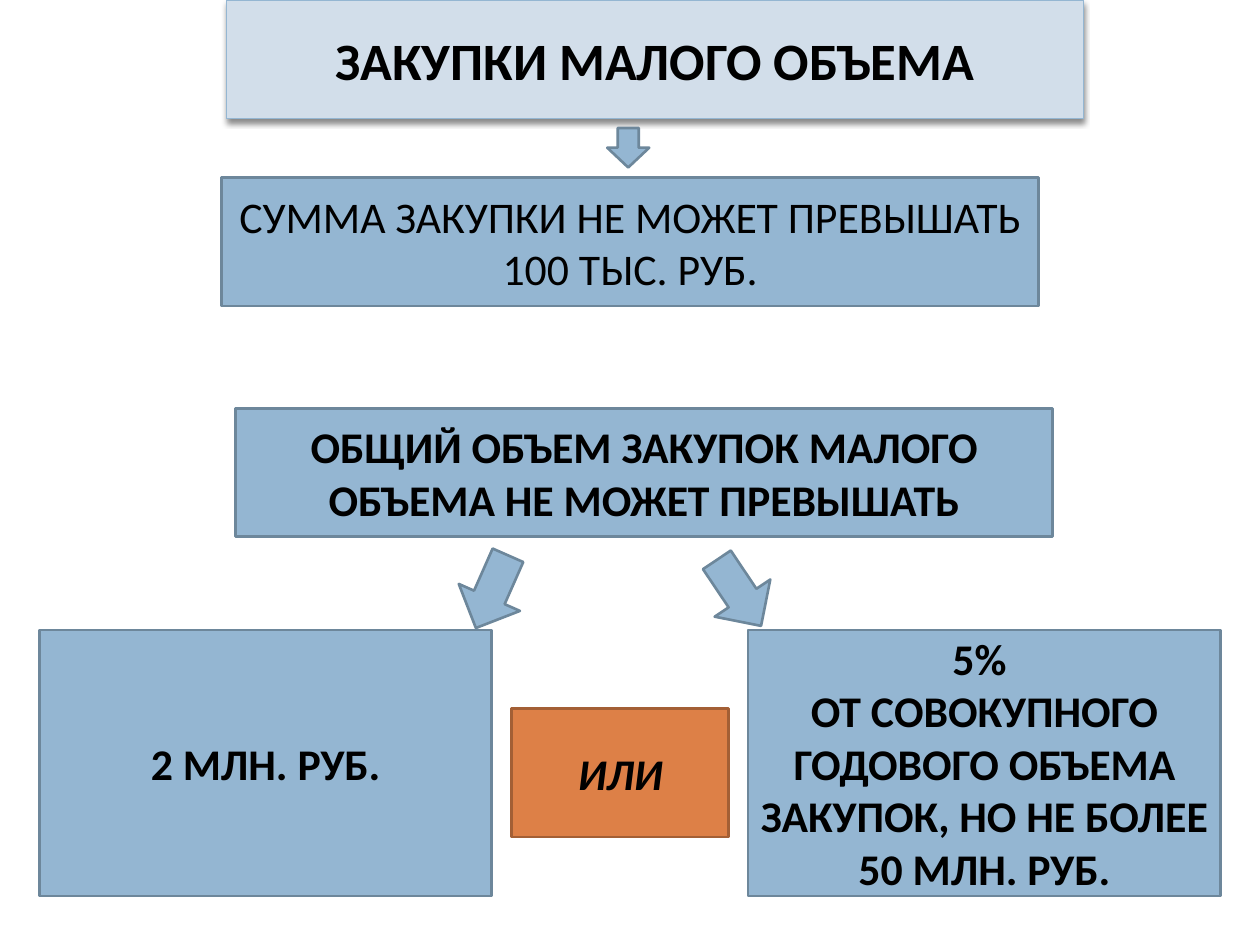
from lxml import etree
from pptx import Presentation
from pptx.dml.color import RGBColor
from pptx.enum import shapes, text
from pptx.oxml import ns
from pptx.util import Pt

BLACK = RGBColor(0x00, 0x00, 0x00)
PALE = RGBColor(0xD2, 0xDE, 0xEA)
BLUE = RGBColor(0x94, 0xB6, 0xD2)
SLATE = RGBColor(0x6D, 0x87, 0x9B)
ORANGE = RGBColor(0xDD, 0x80, 0x47)
BROWN = RGBColor(0xA3, 0x5F, 0x35)


class Deck:
    font = "Calibri"
    size = 25
    edge = 1.5

    def __init__(self, wide, high):
        self.prs = Presentation()
        self.prs.slide_width, self.prs.slide_height = Pt(wide), Pt(high)
        self.slide = self.prs.slides.add_slide(self.prs.slide_layouts[5])

    def paint(self, shape, fill, line, width):
        shape.fill.solid()
        shape.fill.fore_color.rgb = fill
        shape.line.color.rgb = line
        shape.line.width = Pt(width)

    def label(self, shape, words, size, bold=True, italic=False):
        frame = shape.text_frame
        frame.text = words
        frame.word_wrap = True
        frame.auto_size = text.MSO_AUTO_SIZE.NONE
        frame.vertical_anchor = text.MSO_ANCHOR.MIDDLE
        frame.margin_left = frame.margin_right = Pt(7)
        frame.margin_top = frame.margin_bottom = Pt(3.6)
        for para in frame.paragraphs:
            para.alignment = text.PP_ALIGN.CENTER
            for run in para.runs:
                font = run.font
                font.name, font.size = self.font, Pt(size)
                font.bold, font.italic = bold, italic
                font.color.rgb = BLACK

    def title(self, words, left, top, wide, high):
        shape = self.slide.shapes.title
        shape.left, shape.top = Pt(left), Pt(top)
        shape.width, shape.height = Pt(wide), Pt(high)
        self.paint(shape, PALE, BLUE, 0.79)
        self.label(shape, words, 30)
        self.shade(shape)

    def shade(self, shape):
        props = shape.element.spPr
        effect = etree.SubElement(props, ns.qn("a:effectLst"))
        outer = etree.SubElement(
            effect, ns.qn("a:outerShdw"), blurRad=str(Pt(3)),
            dist=str(Pt(2.4)), dir="5400000", rotWithShape="0")
        color = etree.SubElement(outer, ns.qn("a:srgbClr"), val=str(BLACK))
        etree.SubElement(color, ns.qn("a:alpha"), val="45000")

    def form(self, kind, left, top, wide, high, fill=BLUE, line=SLATE):
        shape = self.slide.shapes.add_shape(
            kind, Pt(left), Pt(top), Pt(wide), Pt(high))
        shape.shadow.inherit = False
        self.paint(shape, fill, line, self.edge)
        return shape

    def box(self, words, left, top, wide, high, fill=BLUE, line=SLATE,
            bold=True, italic=False):
        shape = self.form(shapes.MSO_SHAPE.RECTANGLE,
                          left, top, wide, high, fill, line)
        self.label(shape, words, self.size, bold, italic)

    def arrow(self, left, top, wide, high, turn=0):
        shape = self.form(shapes.MSO_SHAPE.DOWN_ARROW, left, top, wide, high)
        shape.rotation = turn

    def save(self):
        self.prs.save("out.pptx")


def main():
    deck = Deck(720, 540)
    wide, high = 466.6, 73.4
    low, tall = 360, 152

    deck.title("ЗАКУПКИ МАЛОГО ОБЪЕМА", 129.6, 0, 489.6, 67.7)
    deck.arrow(347, 73.1, 24, 22.6)
    deck.box("СУММА ЗАКУПКИ НЕ МОЖЕТ ПРЕВЫШАТЬ 100 ТЫС. РУБ.",
             126.7, 101.5, wide, high, bold=False)
    deck.box("5% \nОТ СОВОКУПНОГО ГОДОВОГО ОБЪЕМА ЗАКУПОК, "
             "НО НЕ БОЛЕЕ 50 МЛН. РУБ.", 427.5, low, 270, tall)
    deck.box("2 МЛН. РУБ.", 22.5, low, 258.5, tall)
    deck.box("ИЛИ", 292.4, 405, 124, high, ORANGE, BROWN, italic=True)
    deck.box("ОБЩИЙ ОБЪЕМ ЗАКУПОК МАЛОГО ОБЪЕМА НЕ МОЖЕТ ПРЕВЫШАТЬ",
             134.7, 233.3, wide, high)
    for left, top, turn in ((262, 315.4, 23.8), (403.2, 316.1, 326.2)):
        deck.arrow(left, top, 38.2, 45.4, turn)
    deck.save()


if __name__ == "__main__":
    main()
